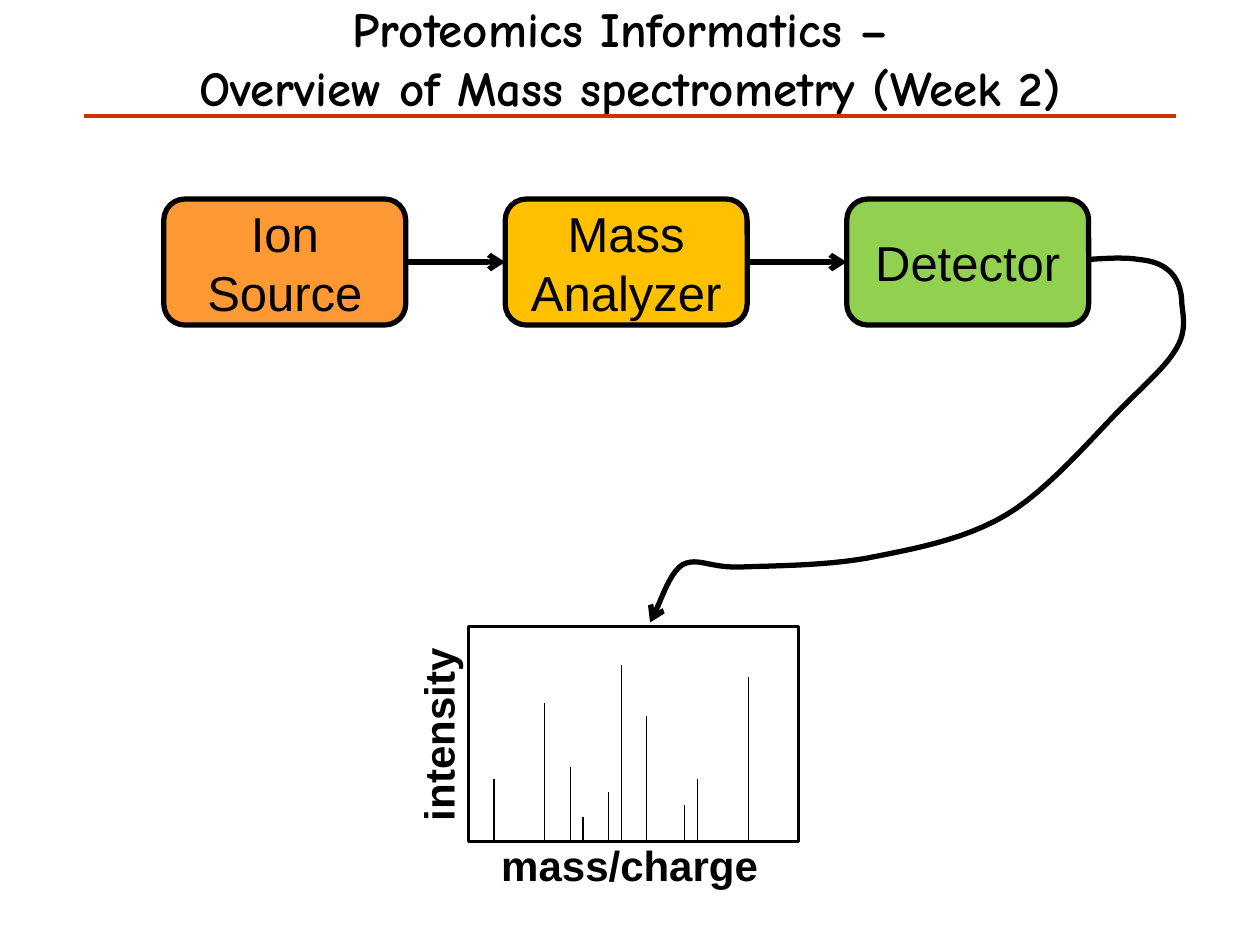
from lxml.etree import SubElement
from pptx import Presentation
from pptx.dml.color import RGBColor
from pptx.enum.shapes import MSO_CONNECTOR, MSO_SHAPE
from pptx.enum.text import MSO_ANCHOR, MSO_AUTO_SIZE, PP_ALIGN
from pptx.oxml.ns import qn
from pptx.util import Inches, Pt

# Content
TITLE = ["Proteomics Informatics – ", "Overview of Mass spectrometry (Week 2)"]
STAGES = [("Ion Source", "FF9933"), ("Mass Analyzer", "FFC000"), ("Detector", "92D050")]
# Spectrum peaks: (column, height), both in grid units
PEAKS = [(0, 5), (4, 11), (6, 6), (7, 2), (9, 4), (10, 14), (12, 10), (15, 3), (16, 5), (20, 13)]
# Axis labels: text, left, top, width, rotation
AXIS_LABELS = [("mass/charge", 3.88, 6.61, 2.26, 0), ("intensity", 2.68, 5.57, 1.59, 270)]
# Path from detector to spectrum: start, then (control, control, end) per curve
SIGNAL_START = (8.63, 2.06)
SIGNAL_CURVES = [
    ((8.78, 2.05), (8.93, 2.04), (9.04, 2.06)),
    ((9.15, 2.07), (9.23, 2.10), (9.29, 2.16)),
    ((9.35, 2.22), (9.38, 2.31), (9.38, 2.41)),
    ((9.39, 2.51), (9.42, 2.62), (9.34, 2.76)),
    ((9.26, 2.90), (9.13, 3.01), (8.91, 3.23)),
    ((8.68, 3.46), (8.32, 3.89), (7.98, 4.09)),
    ((7.64, 4.29), (7.23, 4.36), (6.88, 4.43)),
    ((6.54, 4.49), (6.13, 4.49), (5.88, 4.50)),
    ((5.64, 4.51), (5.54, 4.42), (5.42, 4.48)),
    ((5.30, 4.55), (5.23, 4.83), (5.16, 4.94)),
]

# Layout, in inches
STAGE_LEFT, STAGE_TOP, STAGE_WIDTH, STAGE_HEIGHT, STAGE_PITCH = 1.3, 1.58, 1.92, 1, 2.71
PEAK_LEFT, PEAK_RIGHT, PEAK_BASE = 3.92, 5.94, 6.69
PEAK_UNIT = (PEAK_RIGHT - PEAK_LEFT) / 20
CURVE_STEPS = 12


def color(value):
    return RGBColor.from_string(value)


def style_line(shape, value, width):
    shape.line.color.rgb = color(value)
    shape.line.width = Pt(width)


def add_arrowhead(shape):
    SubElement(shape.line._get_or_add_ln(), qn("a:tailEnd"), type="arrow")


def add_run(paragraph, text, size, font="Arial", bold=False):
    run = paragraph.add_run()
    run.text = text
    run.font.name = font
    run.font.size = Pt(size)
    run.font.bold = bold
    run.font.color.rgb = color("000000")


def add_box(shapes, kind, box, fill, width):
    shape = shapes.add_shape(kind, *map(Inches, box))
    shape.shadow.inherit = False
    shape.fill.solid()
    shape.fill.fore_color.rgb = color(fill)
    style_line(shape, "000000", width)
    return shape


def add_line(shapes, start, end, value, width):
    line = shapes.add_connector(MSO_CONNECTOR.STRAIGHT, *map(Inches, start + end))
    style_line(line, value, width)
    SubElement(line._element.spPr, qn("a:effectLst"))
    return line


def curve_points(start, curves):
    """Sample each cubic curve at equal steps, in whole EMU."""
    for first, second, end in curves:
        for step in range(1, CURVE_STEPS + 1):
            t = step / CURVE_STEPS
            u = 1 - t
            yield tuple(
                Inches(u**3 * a + 3 * u * u * t * b + 3 * u * t * t * c + t**3 * d)
                for a, b, c, d in zip(start, first, second, end)
            )
        start = end


def main():
    presentation = Presentation()
    presentation.slide_width, presentation.slide_height = Inches(10), Inches(7.5)
    slide = presentation.slides.add_slide(presentation.slide_layouts[5])
    shapes = slide.shapes

    # Title and rule
    title = shapes.title
    title.left, title.top, title.width, title.height = map(Inches, (0, 0.08, 10, 0.75))
    frame = title.text_frame
    frame.auto_size = MSO_AUTO_SIZE.NONE
    frame.vertical_anchor = MSO_ANCHOR.MIDDLE
    for index, text in enumerate(TITLE):
        paragraph = frame.add_paragraph() if index else frame.paragraphs[0]
        paragraph.alignment = PP_ALIGN.CENTER
        add_run(paragraph, text, 28, "Comic Neue", True)
    add_line(shapes, (0.67, 0.92), (9.33, 0.92), "CC3300", 2.5)

    # Instrument stages
    stages = []
    for index, (text, fill) in enumerate(STAGES):
        box = (STAGE_LEFT + index * STAGE_PITCH, STAGE_TOP, STAGE_WIDTH, STAGE_HEIGHT)
        stage = add_box(shapes, MSO_SHAPE.ROUNDED_RECTANGLE, box, fill, 3)
        stage.text_frame.word_wrap = True
        stage.text_frame.vertical_anchor = MSO_ANCHOR.MIDDLE
        paragraph = stage.text_frame.paragraphs[0]
        paragraph.alignment = PP_ALIGN.CENTER
        add_run(paragraph, text, 28)
        stages.append(stage)

    # Arrows between neighbouring stages
    for source, target in zip(stages, stages[1:]):
        arrow = add_line(shapes, (0, 0), (1, 1), "000000", 3)
        arrow.begin_connect(source, 3)
        arrow.end_connect(target, 1)
        add_arrowhead(arrow)

    # Mass spectrum
    spectrum = shapes.add_group_shape().shapes
    add_box(spectrum, MSO_SHAPE.RECTANGLE, (3.72, 4.97, 2.62, 1.71), "FFFFFF", 1.5)
    for column, height in PEAKS:
        x = PEAK_LEFT + column * PEAK_UNIT
        add_line(spectrum, (x, PEAK_BASE - height * PEAK_UNIT), (x, PEAK_BASE), "000000", 0.75)

    # Axis labels
    for text, left, top, width, rotation in AXIS_LABELS:
        label = shapes.add_textbox(*map(Inches, (left, top, width, 0.5)))
        label.rotation = rotation
        label.text_frame.word_wrap = False
        label.text_frame.auto_size = MSO_AUTO_SIZE.SHAPE_TO_FIT_TEXT
        add_run(label.text_frame.paragraphs[0], text, 24, bold=True)

    # Curved arrow from detector to spectrum
    builder = shapes.build_freeform(*map(Inches, SIGNAL_START))
    builder.add_line_segments(curve_points(SIGNAL_START, SIGNAL_CURVES), close=False)
    signal = builder.convert_to_shape()
    signal.shadow.inherit = False
    signal.fill.background()
    style_line(signal, "000000", 3)
    add_arrowhead(signal)

    presentation.save("out.pptx")


if __name__ == "__main__":
    main()
